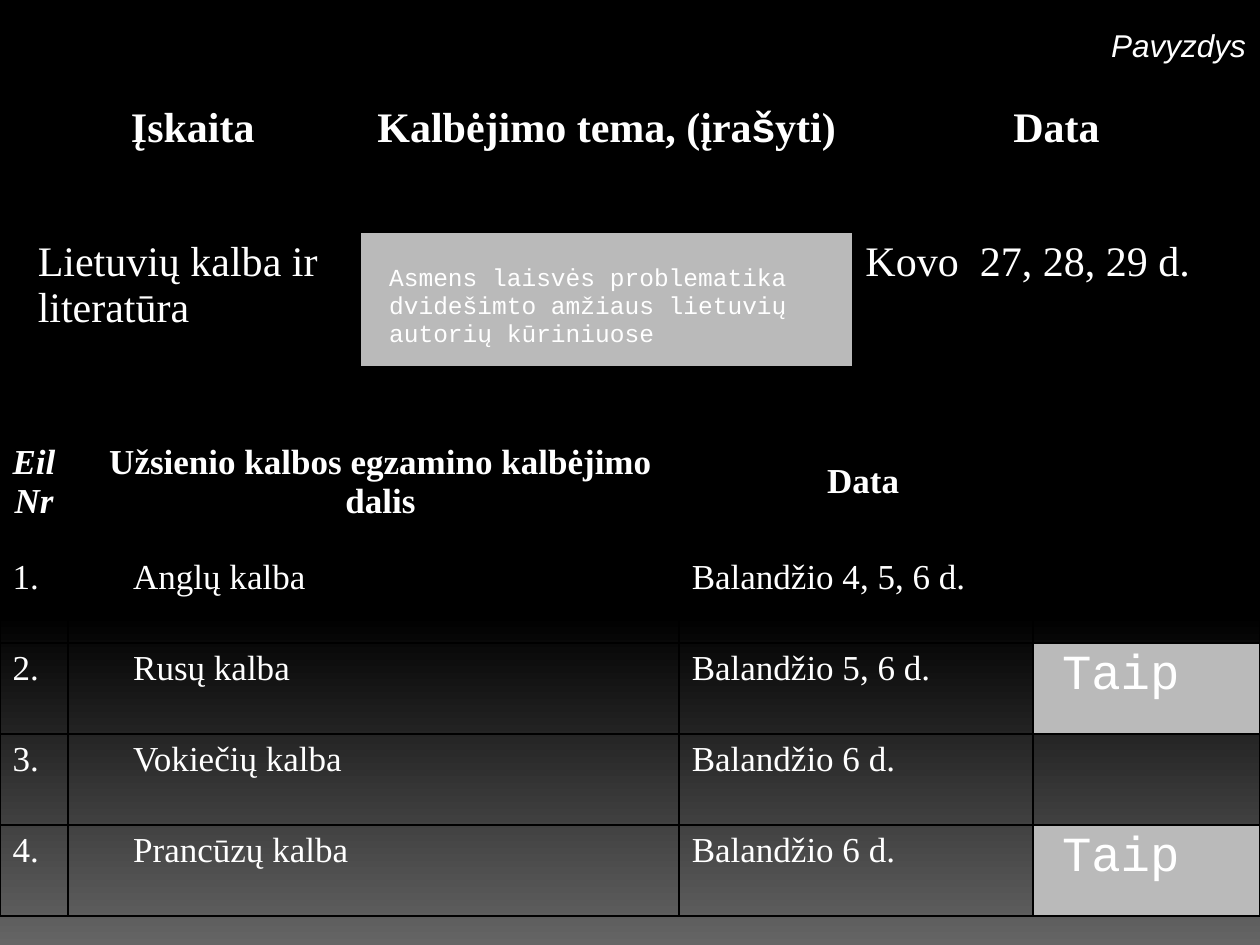
from copy import deepcopy
from pptx import Presentation
from pptx.dml.color import RGBColor
from pptx.enum.text import MSO_ANCHOR, MSO_AUTO_SIZE, PP_ALIGN
from pptx.oxml.ns import qn
from pptx.util import Pt
from lxml.etree import SubElement

COLORS = {"text": "FFFFFF", "line": "000000", "dark": "000000", "light": "656565", "entry": "BABABA"}
SERIF, SANS, MONO = "Times New Roman", "Arial", "Courier New"

STYLES = {
    "exam_head": {"font": {"size": Pt(24), "bold": True}, "para": {"alignment": PP_ALIGN.CENTER}},
    "exam": {"font": {"size": Pt(24)}},
    "topic": {"font": {"size": Pt(14), "name": MONO}, "cell": {"margin_left": Pt(16.5), "margin_top": Pt(19.5)},
              "fill": "entry"},
    "head": {"font": {"size": Pt(20), "bold": True}, "para": {"alignment": PP_ALIGN.CENTER},
             "cell": {"vertical_anchor": MSO_ANCHOR.MIDDLE}},
    "number_head": {"font": {"size": Pt(20), "bold": True, "italic": True},
                    "para": {"alignment": PP_ALIGN.CENTER}, "cell": {"vertical_anchor": MSO_ANCHOR.MIDDLE}},
    "plain": {"font": {"size": Pt(20)}},
    "language": {"font": {"size": Pt(20)}, "cell": {"margin_left": Pt(37.2)}},
    "answer": {"font": {"size": Pt(28), "name": MONO}, "cell": {"margin_left": Pt(16.5)}, "fill": "entry"},
}

TITLE = "Pavyzdys"
LANGUAGES = [
    ("Anglų kalba", "Balandžio 4, 5, 6 d.", ""),
    ("Rusų kalba", "Balandžio 5, 6 d.", "Taip"),
    ("Vokiečių kalba", "Balandžio 6 d.", ""),
    ("Prancūzų kalba", "Balandžio 6 d.", "Taip"),
]
TABLES = [
    {"at": (14.4, 56.2), "cols": (191.5, 281.5, 232.6), "row": 76.6, "cells": [
        [("Įskaita", "exam_head"),
         ([("Kalbėjimo tema, (įra", SERIF), ("š", SANS), ("yti)", SERIF)], "exam_head"),
         ("Data", "exam_head")],
        [("Lietuvių kalba ir literatūra", "exam"),
         ("Asmens laisvės problematika dvidešimto amžiaus lietuvių autorių kūriniuose", "topic"),
         ("Kovo  27, 28, 29 d.", "exam")]]},
    {"at": (0, 247.7), "cols": (38.9, 357.1, 194.4, 129.6), "row": 55.4, "cells": [
        [("Eil\nNr", "number_head"), ("Užsienio kalbos egzamino kalbėjimo dalis", "head"),
         ("Data", "head"), ("", "plain")]]},
    {"at": (0, 315.4), "cols": (38.9, 349.2, 202.3, 129.6), "row": 52, "cells": [
        [(f"{n}.", "plain"), (language, "language"), (date, "plain"), (answer, "answer" if answer else "plain")]
        for n, (language, date, answer) in enumerate(LANGUAGES, 1)]},
]


def rgb(name):
    return RGBColor.from_string(COLORS[name])


def apply(obj, values):
    for key, value in values.items():
        setattr(obj, key, value)


def add_borders(cell):
    tcPr = cell._tc.get_or_add_tcPr()
    for side in ("lnL", "lnR", "lnT", "lnB"):
        ln = SubElement(tcPr, qn(f"a:{side}"), w=str(Pt(1)))
        SubElement(SubElement(ln, qn("a:solidFill")), qn("a:srgbClr"), val=COLORS["line"])


def fill_cell(cell, text, style):
    add_borders(cell)
    apply(cell, style.get("cell", {}))
    if "fill" in style:
        cell.fill.solid()
        cell.fill.fore_color.rgb = rgb(style["fill"])
    else:
        cell.fill.background()
    if not text:
        return
    lines = [[(line, SERIF)] for line in text.split("\n")] if isinstance(text, str) else [text]
    tf = cell.text_frame
    for i, line in enumerate(lines):
        p = tf.add_paragraph() if i else tf.paragraphs[0]
        apply(p, style.get("para", {}))
        for part, name in line:
            r = p.add_run()
            r.text = part
            apply(r.font, {"name": name, "bold": False, **style["font"]})
            r.font.color.rgb = rgb("text")


def add_grid(s, at, cols, row, cells):
    x, y = at
    table = s.shapes.add_table(len(cells), len(cols), Pt(x), Pt(y), Pt(sum(cols)), Pt(row * len(cells))).table
    apply(table, {"first_row": False, "horz_banding": False})
    for col, width in zip(table.columns, cols):
        col.width = Pt(width)
    for r, line in enumerate(cells):
        table.rows[r].height = Pt(row)
        for c, (text, style) in enumerate(line):
            fill_cell(table.cell(r, c), text, STYLES[style])


def set_background(s):
    fill = s.background.fill
    fill.gradient()
    fill.gradient_angle = 270
    gs_list = s.element.find(".//" + qn("a:gsLst"))
    gs_list.insert(0, deepcopy(gs_list[0]))
    for stop, (position, name) in zip(fill.gradient_stops, [(0, "dark"), (0.65, "dark"), (1, "light")]):
        stop.position = position
        stop.color.rgb = rgb(name)


def add_title(s):
    sp = s.shapes.title
    apply(sp, {"left": Pt(627.8), "top": Pt(11.5), "width": Pt(92.2), "height": Pt(28.8)})
    tf = sp.text_frame
    tf.text = TITLE
    apply(tf, {"word_wrap": False, "auto_size": MSO_AUTO_SIZE.SHAPE_TO_FIT_TEXT, "vertical_anchor": MSO_ANCHOR.TOP})
    p = tf.paragraphs[0]
    p.alignment = PP_ALIGN.LEFT
    apply(p.runs[0].font, {"size": Pt(18), "name": SANS, "italic": True})
    p.runs[0].font.color.rgb = rgb("text")


def main():
    """Build the slide with the exam schedule tables."""
    prs = Presentation()
    apply(prs, {"slide_width": Pt(720), "slide_height": Pt(540)})
    s = prs.slides.add_slide(prs.slide_layouts[5])
    set_background(s)
    add_title(s)
    for spec_table in TABLES:
        add_grid(s, **spec_table)
    prs.save("out.pptx")


if __name__ == "__main__":
    main()
